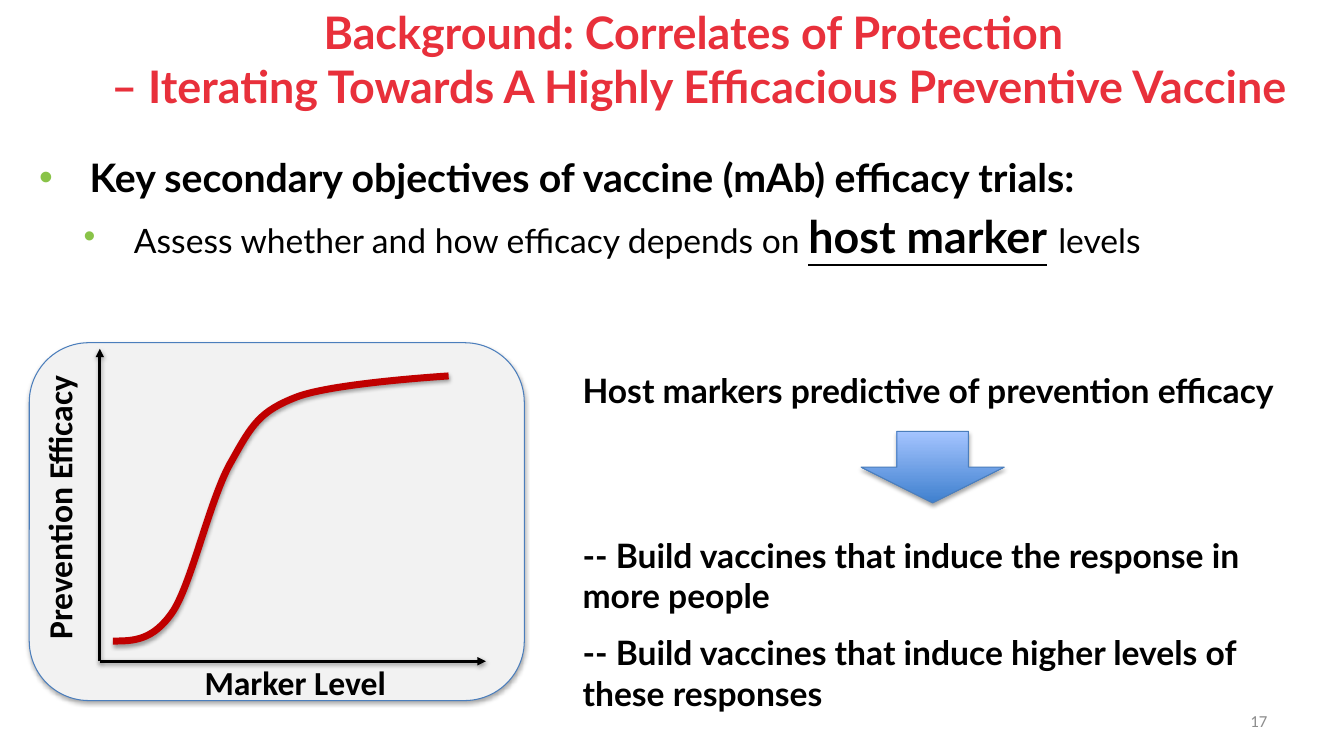
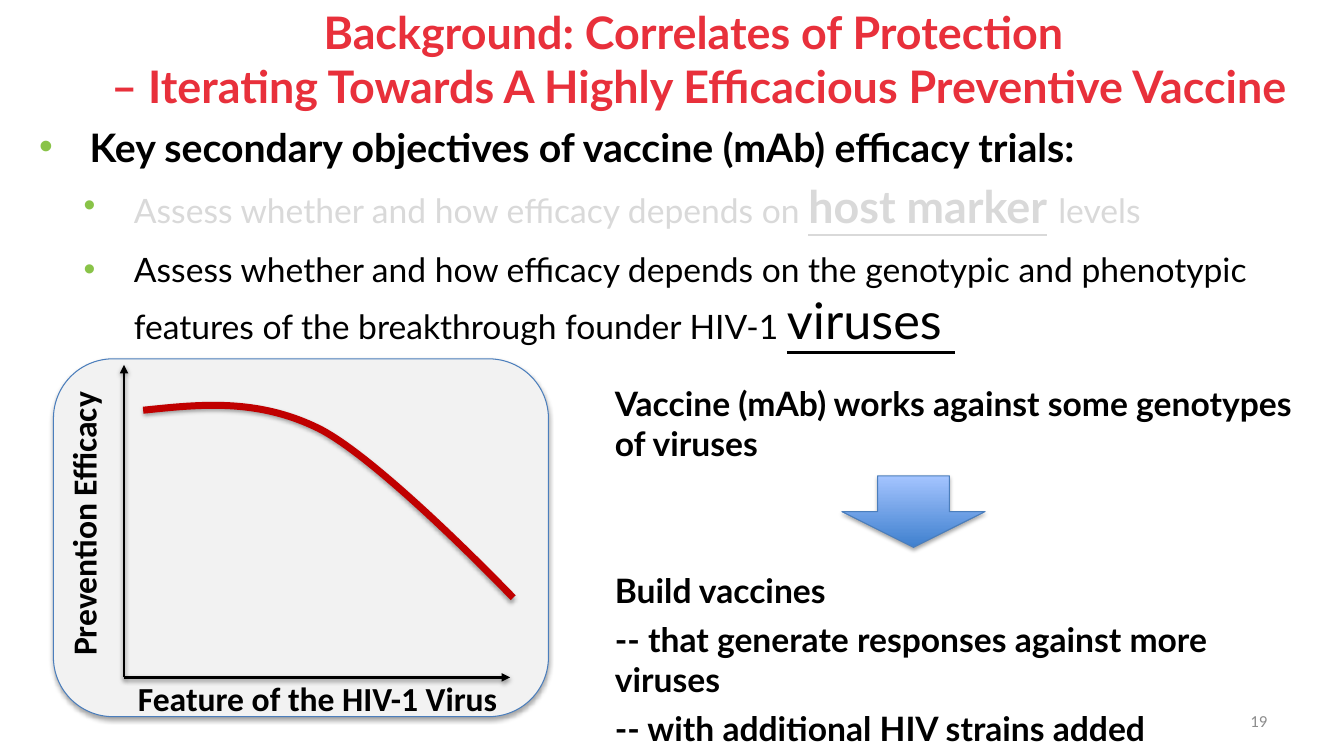
from dataclasses import dataclass

from lxml.etree import SubElement
from pptx import Presentation
from pptx.dml.color import RGBColor as Rgb
from pptx.enum.shapes import MSO_CONNECTOR as Link, MSO_SHAPE as Form
from pptx.enum.text import MSO_ANCHOR as Anchor, MSO_AUTO_SIZE as Fit, PP_ALIGN as Align
from pptx.oxml.ns import qn
from pptx.util import Pt

PX = 9144  # EMU per px, 100 px to the inch
WIDE, HIGH = 1333, 750
HUES = {
    "title": "E8303B", "text": "000000", "faded": "D9D9D9", "bullet": "89C348",
    "number": "8C8C8C", "panel": "F2F2F2", "edge": "4B7EBC", "curve": "C00000",
    "deep": "3F80CE", "light": "A4C4FF", "shadow": "000000",
}
HEAD, LABEL = "Lato", "Calibri"
TITLE = ("Background: Correlates of Protection \v"
         "– Iterating Towards A Highly Efficacious Preventive Vaccine")
TITLE_BOX = (83, 13, 1221, 91)
NUMBER_BOX = (956, 695, 311, 40)
INDENTS = (50, 94)
HANG = 50

Box = tuple[int, int, int, int]
Point = tuple[int, int]


@dataclass(frozen=True)
class Run:
    text: str
    size: int = 24
    bold: bool = True
    under: bool = False
    hue: str = "text"
    font: str = HEAD


@dataclass(frozen=True)
class Para:
    runs: tuple[Run, ...]
    before: int = 0
    level: int | None = None
    align: Align = Align.LEFT


@dataclass(frozen=True)
class Panel:
    left: int
    top: int
    label: Para
    label_left: int
    label_wide: int
    curve: tuple[Point, ...]


@dataclass(frozen=True)
class Page:
    number: int
    goals_top: int
    goals: tuple[Para, ...]
    panel: Panel
    claim_box: Box
    claims: tuple[Para, ...]
    arrow: Point


def paint(name: str) -> Rgb:
    return Rgb.from_string(HUES[name])


def apply(obj, values: dict) -> None:
    for name, value in values.items():
        setattr(obj, name, value)


def place(shape, box: Box) -> None:
    apply(shape, dict(zip(("left", "top", "width", "height"), (v * PX for v in box))))


def stroke(shape, hue: str, width: float) -> None:
    shape.line.color.rgb = paint(hue)
    shape.line.width = Pt(width)


def shade(shape, alpha: int = 35, gap: float = 1.8) -> None:
    """Add a downward shadow; call it once fill and line are set."""
    effects = SubElement(shape.element.spPr, qn("a:effectLst"))
    outer = SubElement(effects, qn("a:outerShdw"), blurRad=str(Pt(3.1)),
                       dist=str(Pt(gap)), dir="5400000", rotWithShape="0")
    tone = SubElement(outer, qn("a:srgbClr"), val=HUES["shadow"])
    SubElement(tone, qn("a:alpha"), val=str(alpha * 1000))


def add_bullet(para, level: int) -> None:
    para.level = level
    props = para._p.get_or_add_pPr()
    props.set("marL", str(INDENTS[level] * PX))
    props.set("indent", str(-HANG * PX))
    tone = SubElement(props, qn("a:buClr"))
    SubElement(tone, qn("a:srgbClr"), val=HUES["bullet"])
    SubElement(props, qn("a:buFont"), typeface="Arial")
    SubElement(props, qn("a:buChar"), char="•")


def style(font, run: Run) -> None:
    apply(font, {"name": run.font, "size": Pt(run.size), "bold": run.bold,
                 "underline": run.under})
    font.color.rgb = paint(run.hue)


def write(frame, paras: tuple[Para, ...], anchor: Anchor = Anchor.TOP) -> None:
    apply(frame, {"word_wrap": True, "auto_size": Fit.NONE, "vertical_anchor": anchor})
    for i, item in enumerate(paras):
        para = frame.add_paragraph() if i else frame.paragraphs[0]
        apply(para, {"alignment": item.align, "space_before": Pt(item.before)})
        if item.level is not None:
            add_bullet(para, item.level)
        for run in item.runs:
            part = para.add_run()
            part.text = run.text
            style(part.font, run)


def add_text(shapes, box: Box, paras: tuple[Para, ...],
             anchor: Anchor = Anchor.TOP, turn: int = 0) -> None:
    text = shapes.add_textbox(*(v * PX for v in box))
    text.rotation = turn
    write(text.text_frame, paras, anchor)


def add_title(slide) -> None:
    title = slide.shapes.title
    place(title, TITLE_BOX)
    frame = title.text_frame
    apply(frame, {"text": TITLE, "word_wrap": True, "auto_size": Fit.NONE,
                  "vertical_anchor": Anchor.MIDDLE})
    para = frame.paragraphs[0]
    para.alignment = Align.CENTER
    for part in para.runs:
        style(part.font, Run(part.text, 32, hue="title"))


def add_axis(shapes, start: Point, end: Point) -> None:
    axis = shapes.add_connector(Link.STRAIGHT, *(v * PX for v in start + end))
    stroke(axis, "text", 2)
    SubElement(axis.element.xpath(".//a:ln")[0], qn("a:tailEnd"), type="triangle")
    shade(axis, 38, 1.6)


def add_curve(shapes, points: tuple[Point, ...]) -> None:
    """Draw a start point followed by triples of cubic Bézier points."""
    start, *rest = points
    pen = shapes.build_freeform(*start, scale=PX)
    pen.add_line_segments(rest, close=False)
    curve = pen.convert_to_shape()
    route = curve.element.xpath(".//a:path")[0]
    steps = route.findall(qn("a:lnTo"))
    for i in range(0, len(steps), 3):
        bend = SubElement(route, qn("a:cubicBezTo"))
        for step in steps[i:i + 3]:
            bend.append(step[0])
            route.remove(step)
    curve.fill.background()
    stroke(curve, "curve", 5)
    shade(curve)


def add_panel(slide, panel: Panel) -> None:
    """Draw the sketch graph: its card, axes, labels and curve."""
    shapes = slide.shapes.add_group_shape().shapes
    x, y = panel.left, panel.top
    card = shapes.add_shape(Form.ROUNDED_RECTANGLE, *(v * PX for v in (x, y, 491, 355)))
    card.fill.solid()
    card.fill.fore_color.rgb = paint("panel")
    stroke(card, "edge", 0.75)
    shade(card)
    zero = (x + 70, y + 316)
    for end in ((x + 70, y + 6), (x + 453, y + 316)):
        add_axis(shapes, zero, end)
    add_text(shapes, (panel.label_left, y + 312, panel.label_wide, 50), (panel.label,))
    add_text(shapes, (x - 132, y + 118, 323, 50), (UPRIGHT,), turn=270)
    add_curve(slide.shapes, panel.curve)


def add_arrow(slide, spot: Point) -> None:
    arrow = slide.shapes.add_shape(Form.DOWN_ARROW, *(v * PX for v in spot + (142, 71)))
    arrow.fill.gradient()
    arrow.fill.gradient_angle = 90
    for stop, hue, at in zip(arrow.fill.gradient_stops, ("deep", "light"), (0, 1)):
        stop.color.rgb = paint(hue)
        stop.position = at
    stroke(arrow, "edge", 0.75)
    shade(arrow)


def add_page(deck, page: Page) -> None:
    slide = deck.slides.add_slide(deck.slide_layouts[5])
    add_title(slide)
    add_text(slide.shapes, (29, page.goals_top, 1276, 530), page.goals)
    add_panel(slide, page.panel)
    add_text(slide.shapes, page.claim_box, page.claims)
    add_arrow(slide, page.arrow)
    number = Run(str(page.number), 12, False, hue="number", font=LABEL)
    add_text(slide.shapes, NUMBER_BOX, (Para((number,), align=Align.RIGHT),), Anchor.MIDDLE)


def label(text: str, align: Align = Align.LEFT) -> Para:
    return Para((Run(text, font=LABEL),), align=align)


def claim(text: str, before: int = 0) -> Para:
    return Para((Run(text),), before)


def host_goal(hue: str) -> Para:
    return Para((
        Run("Assess whether and how efficacy depends on ", bold=False, hue=hue),
        Run("host marker", 32, under=True, hue=hue),
        Run(" ", 32, hue=hue),
        Run("levels", bold=False, hue=hue),
    ), 6, 1)


UPRIGHT = label("Prevention Efficacy")
KEY_GOAL = Para((Run("Key secondary objectives of vaccine (mAb) efficacy trials:", 28),), 6, 0)
VIRUS_GOAL = Para((
    Run("Assess whether and how efficacy depends on the genotypic and phenotypic "
        "features of the breakthrough founder HIV-1 ", bold=False),
    Run("viruses ", 36, False, True),
), 12, 1)

PAGES = (
    Page(
        17, 147, (KEY_GOAL, host_goal("text")),
        Panel(29, 340, label("Marker Level"), 193, 318,
              ((112, 636), (132, 636), (152, 636), (172, 606),
               (191, 576), (209, 492), (230, 457),
               (250, 421), (258, 408), (294, 394),
               (330, 380), (445, 373), (445, 373))),
        (568, 362, 737, 397),
        (claim("Host markers predictive of prevention efficacy"),
         claim("-- Build vaccines that induce the response in more people", 89),
         claim("-- Build vaccines that induce higher levels of these responses", 12)),
        (854, 428),
    ),
    Page(
        19, 117, (KEY_GOAL, host_goal("faded"), VIRUS_GOAL),
        Panel(53, 356, label("Feature of the HIV-1 Virus", Align.CENTER), 34, 562,
              ((142, 407), (199, 401), (255, 395), (316, 425),
               (378, 456), (509, 593), (509, 593))),
        (600, 375, 695, 365),
        (claim("Vaccine (mAb) works against some genotypes of viruses", 6),
         claim("Build vaccines", 76),
         claim("-- that generate responses against more viruses", 6),
         claim("-- with additional HIV strains added", 6)),
        (835, 472),
    ),
)


def main() -> None:
    deck = Presentation()
    apply(deck, {"slide_width": WIDE * PX, "slide_height": HIGH * PX})
    for page in PAGES:
        add_page(deck, page)
    deck.save("out.pptx")


if __name__ == "__main__":
    main()
